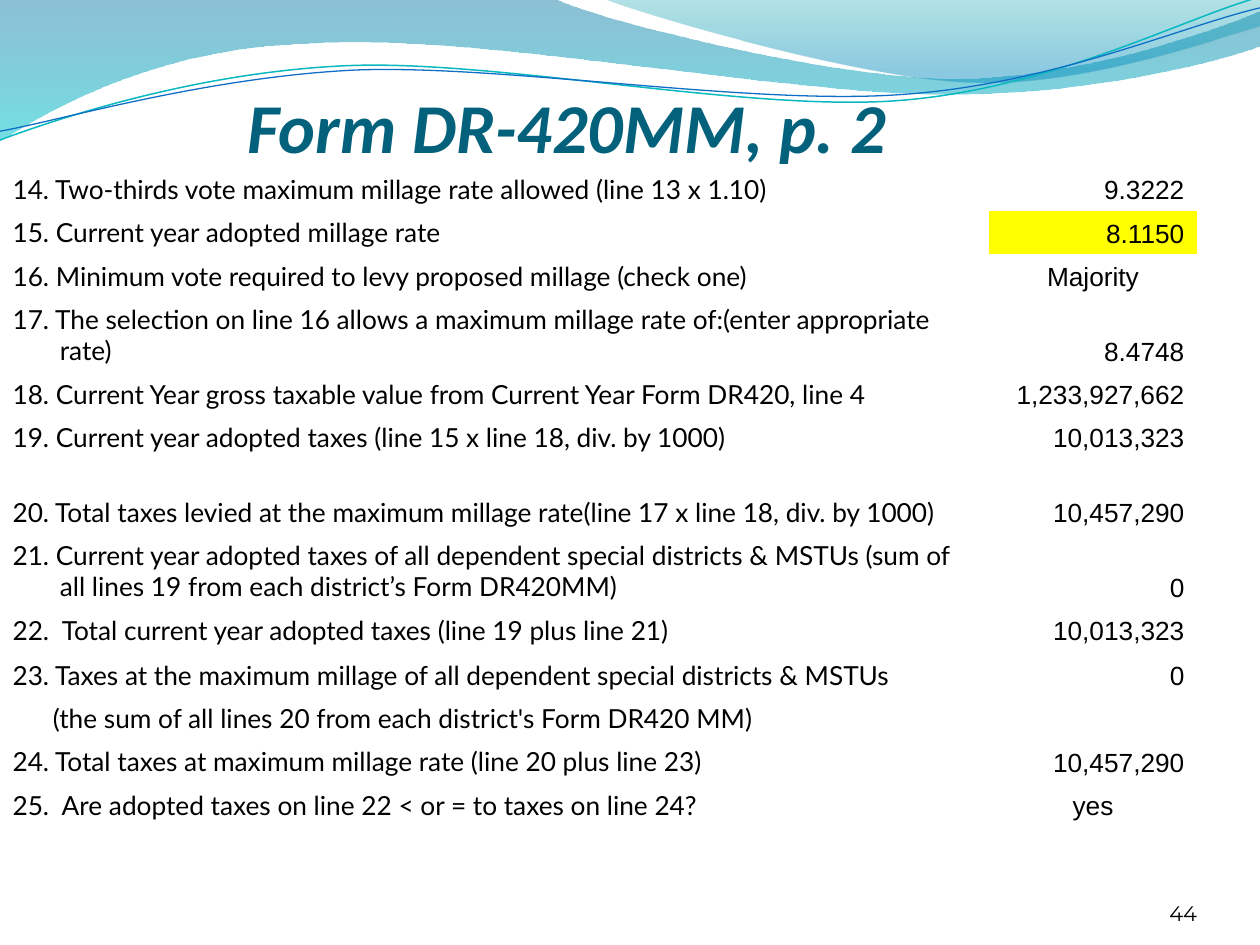
import math

import pptx
import pptx.dml.color
import pptx.enum.text
import pptx.util
from lxml import etree
from pptx.oxml.ns import qn

Pt = pptx.util.Pt
RGBColor = pptx.dml.color.RGBColor
ALIGN = pptx.enum.text.PP_ALIGN
ANCHOR = pptx.enum.text.MSO_ANCHOR

BLACK = RGBColor(0x00, 0x00, 0x00)
YELLOW = RGBColor(0xFF, 0xFF, 0x00)
TITLE_BLUE = RGBColor(0x04, 0x61, 0x7B)
DEEP_BLUE = RGBColor(0x00, 0x74, 0xA1)
CYAN = RGBColor(0x00, 0xC6, 0xCF)
TEAL = RGBColor(0x00, 0xA1, 0xA9)
SKY = RGBColor(0x00, 0x8B, 0xBF)
LINE_TEAL = RGBColor(0x0A, 0xB8, 0xBF)
LINE_BLUE = RGBColor(0x0F, 0x6F, 0xC6)

HANGING = 27
LINE_TILT = 357.3
PLAIN_STYLE = "{2D5ABB26-0587-4C30-8999-92F81FD0307C}"

BROAD_WAVE = [(0, 0), (317, -0.7), (343, 12), (478, 45), (546, 45),
              (614, 45), (690, 19), (720, 6.5),
              (721, 26), (708, 32), (626, 55), (537, 54), (448, 54),
              (275, 20), (185, 24.5), (93, 26), (33, 60), (-0.7, 81)]
RIGHT_WAVE = [(345, -0.7), (366, 8), (491, 45), (554, 47),
              (616, 50), (692, 23), (720, 15), (720, 0)]
TEAL_LINE = [(0, 80), (35, 67), (114, 41), (199, 37.5), (284, 34),
             (427, 64), (513, 57.5), (600, 51), (675, 11), (719, -1.5)]
BLUE_LINE = [(0, 75), (34, 69), (118, 44), (204, 40), (290, 37),
             (430, 60.5), (516, 54), (602, 48), (675, 15), (720, 4.5)]

ROWS = [
    ("14. Two-thirds vote maximum millage rate allowed (line 13 x 1.10)", "9.3222", 24.75),
    ("15. Current year adopted millage rate", "8.1150", 24.75),
    ("16. Minimum vote required to levy proposed millage (check one)", "Majority", 24.75),
    ("17. The selection on line 16 allows a maximum millage rate of:(enter appropriate rate)",
     "8.4748", 42.7),
    ("18. Current Year gross taxable value from Current Year Form DR420, line 4",
     "1,233,927,662", 24.75),
    ("19. Current year adopted taxes (line 15 x line 18, div. by 1000)", "10,013,323", 24.75),
    ("20. Total taxes levied at the maximum millage rate(line 17 x line 18, div. by 1000)",
     "10,457,290", 42.7),
    ("21. Current year adopted taxes of all dependent special districts & MSTUs "
     "(sum of all lines 19 from each district’s Form DR420MM)", "0", 42.7),
    ("22.  Total current year adopted taxes (line 19 plus line 21)", "10,013,323", 24.75),
    ("23. Taxes at the maximum millage of all dependent special districts & MSTUs", "0", 25.75),
    ("(the sum of all lines 20 from each district's Form DR420 MM)", "", 24.75),
    ("24. Total taxes at maximum millage rate (line 20 plus line 23)", "10,457,290", 24.75),
    ("25.  Are adopted taxes on line 22 < or = to taxes on line 24?", "yes", 24.75),
]


def turn_points(points, center, degrees):
    """Turn points clockwise about a center."""
    cos, sin = math.cos(math.radians(degrees)), math.sin(math.radians(degrees))
    offsets = [(x - center[0], y - center[1]) for x, y in points]
    return [(center[0] + x * cos - y * sin, center[1] + x * sin + y * cos)
            for x, y in offsets]


def draw_outline(page, box, points, pattern, close):
    """Draw lines (L) and cubic curves (C) through points relative to the box."""
    left, top = box[:2]
    spots = [(Pt(left + x), Pt(top + y)) for x, y in points]
    builder = page.shapes.build_freeform(*spots[0])
    builder.add_line_segments(spots[1:], close=close)
    shape = builder.convert_to_shape()
    shape.shadow.inherit = False
    segments = iter(list(shape.element.spPr.iter(qn("a:lnTo"))))
    for kind in pattern:
        segment = next(segments)
        if kind == "C":
            segment.addprevious(curve := etree.Element(qn("a:cubicBezTo")))
            for part in (segment, next(segments), next(segments)):
                curve.append(part[0])
                part.getparent().remove(part)
    return shape


def add_wave(page, box, points, pattern, stops):
    """Add a closed wave with a see-through vertical gradient."""
    shape = draw_outline(page, box, points, pattern, True)
    shape.line.fill.background()
    shape.fill.gradient()
    shape.fill.gradient_angle = 270
    for stop, (position, color, opacity) in zip(shape.fill.gradient_stops, stops):
        stop.position = position
        stop.color.rgb = color
    colors = shape.element.spPr.find(qn("a:gradFill")).iter(qn("a:srgbClr"))
    for node, (position, color, opacity) in zip(colors, stops):
        etree.SubElement(node, qn("a:alpha")).set("val", str(opacity * 1000))


def add_wave_line(page, box, nodes, center, color, width):
    """Add a thin tilted wave line."""
    points = turn_points(nodes, center, 360 - LINE_TILT)
    shape = draw_outline(page, box, points, "CCC", False)
    shape.rotation = LINE_TILT
    shape.fill.background()
    shape.line.color.rgb = color
    shape.line.width = Pt(width)


def add_header_waves(page, box):
    """Place the waves and lines across the top of the page."""
    add_wave(page, box, BROAD_WAVE, "LCCLCCC", [(0, DEEP_BLUE, 45), (1, CYAN, 55)])
    add_wave(page, box, RIGHT_WAVE, "CCL", [(0, TEAL, 30), (0.8, SKY, 45)])
    add_wave_line(page, box, TEAL_LINE, (359.3, 41.4), LINE_TEAL, 0.85)
    add_wave_line(page, box, BLUE_LINE, (359.6, 42.5), LINE_BLUE, 0.75)


def format_span(span, font, size, color):
    """Set the font, size and colour of a run."""
    span.font.name = font
    span.font.size = Pt(size)
    span.font.color.rgb = color


def add_label(page, box, text, align, font, size, color, top_inset=0):
    """Add a bottom-anchored line of text and return its run."""
    frame = page.shapes.add_textbox(*map(Pt, box)).text_frame
    frame.word_wrap = True
    frame.vertical_anchor = ANCHOR.BOTTOM
    frame.margin_left = frame.margin_right = frame.margin_bottom = 0
    frame.margin_top = Pt(top_inset)
    frame.text = text
    para = frame.paragraphs[0]
    para.alignment = align
    format_span(para.runs[0], font, size, color)
    return para.runs[0]


def fill_cell(cell, text, font, align, margin=HANGING, indent=-HANGING):
    """Write one bottom-anchored table cell."""
    cell.fill.background()
    cell.vertical_anchor = ANCHOR.BOTTOM
    cell.margin_top = cell.margin_bottom = Pt(3.3)
    para = cell.text_frame.paragraphs[0]
    if not text:
        ending = etree.SubElement(para._p, qn("a:endParaRPr"))
        ending.set("sz", "1500")
        return
    para.text = text
    para.alignment = align
    properties = para._p.get_or_add_pPr()
    properties.set("marL", str(Pt(margin)))
    properties.set("indent", str(Pt(indent)))
    format_span(para.runs[0], font, 15, BLACK)


def add_millage_table(page, box):
    """Place the form lines and their values."""
    table = page.shapes.add_table(len(ROWS), 2, *map(Pt, box)).table
    table.first_row = table.horz_banding = False
    table._tbl.tblPr.find(qn("a:tableStyleId")).text = PLAIN_STYLE
    table.columns[0].width = Pt(565.2)
    table.columns[1].width = Pt(box[2] - 565.2)
    for index, (label, value, height) in enumerate(ROWS):
        table.rows[index].height = Pt(height)
        label_cell, value_cell = table.cell(index, 0), table.cell(index, 1)
        hang = (23, 0) if label.startswith("(") else (HANGING, -HANGING)
        fill_cell(label_cell, label, "Lato", ALIGN.LEFT, *hang)
        align = ALIGN.CENTER if value.isalpha() else ALIGN.RIGHT
        fill_cell(value_cell, value, "Arial", align)
        if label.startswith("15."):
            value_cell.fill.solid()
            value_cell.fill.fore_color.rgb = YELLOW


def main():
    """Build the page and save the deck."""
    deck = pptx.Presentation()
    deck.slide_width, deck.slide_height = Pt(720), Pt(540)
    page = deck.slides.add_slide(deck.slide_layouts[6])
    add_header_waves(page, (0, 0, 720, 82))
    add_label(page, (624, 500.4, 60, 28.8), "44", ALIGN.RIGHT, "Montserrat", 12, BLACK)
    title = add_label(page, (0, 41.8, 648, 54), "Form DR-420MM, p. 2", ALIGN.CENTER,
                      "Calibri", 40, TITLE_BLUE, 3.6)
    title.font.bold = title.font.italic = True
    add_millage_table(page, (0, 95.8, 684, 377))
    deck.save("out.pptx")


if __name__ == "__main__":
    main()
